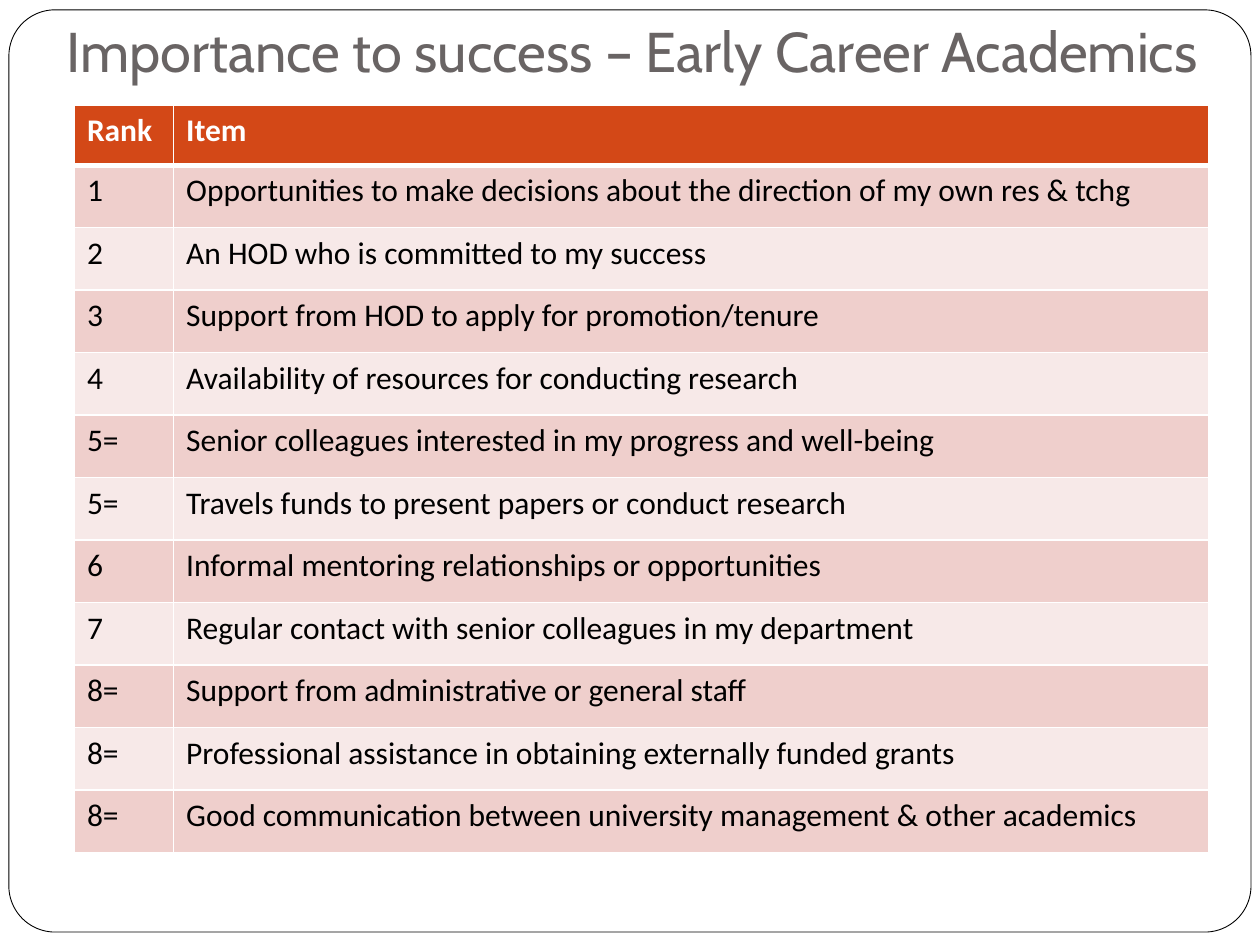
import pptx
import pptx.dml.color
import pptx.enum.shapes
import pptx.enum.text
import pptx.oxml
import pptx.oxml.ns
import pptx.util
from pptx.util import Cm

RANKING = [
    ("Rank", "Item"),
    ("1", "Opportunities to make decisions about the direction of my own res & tchg"),
    ("2", "An HOD who is committed to my success"),
    ("3", "Support from HOD to apply for promotion/tenure"),
    ("4", "Availability of resources for conducting research"),
    ("5=", "Senior colleagues interested in my progress and well-being"),
    ("5=", "Travels funds to present papers or conduct research"),
    ("6", "Informal mentoring relationships or opportunities"),
    ("7", "Regular contact with senior colleagues in my department"),
    ("8=", "Support from administrative or general staff"),
    ("8=", "Professional assistance in obtaining externally funded grants"),
    ("8=", "Good communication between university management & other academics"),
]


def colour(hex_code):
    return pptx.dml.color.RGBColor.from_string(hex_code)


def apply_format(target, values):
    for name, value in values.items():
        setattr(target, name, value)


class RankingSlide:
    WHITE, BLACK, GREY = "FFFFFF", "000000", "696464"
    HEADER, BANDS = "D34817", ("EFCFCC", "F7E9E8")
    TITLE_FONT = {"name": "Cabin", "size": pptx.util.Pt(32)}
    CELL_FONT = {"name": "Calibri", "size": pptx.util.Pt(18)}
    TITLE_FRAME = {
        "word_wrap": True,
        "vertical_anchor": pptx.enum.text.MSO_ANCHOR.BOTTOM,
        "margin_left": Cm(0.25),
        "margin_right": Cm(0.25),
        "margin_top": Cm(0.13),
        "margin_bottom": Cm(0.25),
    }

    def __init__(self, deck):
        self.slide = deck.slides.add_slide(deck.slide_layouts[6])

    def add_words(self, frame, text, font, hex_code):
        run = frame.paragraphs[0].add_run()
        run.text = text
        apply_format(run.font, font)
        run.font.color.rgb = colour(hex_code)

    def border(self, left, top, width, height):
        outline = self.slide.shapes.add_shape(
            pptx.enum.shapes.MSO_SHAPE.ROUNDED_RECTANGLE, left, top, width, height)
        outline.adjustments[0] = 0.05
        outline.shadow.inherit = False
        outline.fill.solid()
        outline.fill.fore_color.rgb = colour(self.WHITE)
        outline.line.color.rgb = colour(self.BLACK)
        outline.line.width = pptx.util.Pt(0.5)

    def title(self, text, left, top, width, height):
        frame = self.slide.shapes.add_textbox(left, top, width, height).text_frame
        apply_format(frame, self.TITLE_FRAME)
        self.add_words(frame, text, self.TITLE_FONT, self.GREY)

    def cell_edges(self, cell, widths):
        """Draw white edges; widths maps L, R, T and B to points."""
        properties = cell._tc.get_or_add_tcPr()
        for side, points in widths.items():
            properties.append(pptx.oxml.parse_xml(
                f'<a:ln{side} {pptx.oxml.ns.nsdecls("a")} w="{pptx.util.Pt(points)}">'
                f'<a:solidFill><a:srgbClr val="{self.WHITE}"/></a:solidFill></a:ln{side}>'))

    def table(self, rows, left, top, column_widths, header_height, row_height):
        heights = [header_height] + [row_height] * (len(rows) - 1)
        grid = self.slide.shapes.add_table(
            len(rows), len(column_widths), left, top,
            sum(column_widths), sum(heights)).table
        for column, width in zip(grid.columns, column_widths):
            column.width = width
        for r, (texts, height) in enumerate(zip(rows, heights)):
            grid.rows[r].height = height
            is_header = r == 0
            fill = self.HEADER if is_header else self.BANDS[(r - 1) % 2]
            ink = self.WHITE if is_header else self.BLACK
            edges = {"L": 1, "R": 1, "T": 3 if r == 1 else 1, "B": 3 if is_header else 1}
            for c, text in enumerate(texts):
                cell = grid.cell(r, c)
                self.cell_edges(cell, edges)
                cell.fill.solid()
                cell.fill.fore_color.rgb = colour(fill)
                self.add_words(cell.text_frame, text,
                               {**self.CELL_FONT, "bold": is_header}, ink)


def main():
    deck = pptx.Presentation()
    apply_format(deck, {"slide_width": Cm(25.4), "slide_height": Cm(19.05)})
    page = RankingSlide(deck)
    page.border(Cm(0.18), Cm(0.2), Cm(25.04), Cm(18.59))
    page.title("Importance to success – Early Career Academics",
               Cm(1.09), Cm(0.13), Cm(24.31), Cm(1.8))
    page.table(RANKING, Cm(1.5), Cm(2.13), [Cm(2), Cm(20.86)], Cm(1.2), Cm(1.26))
    deck.save("out.pptx")


if __name__ == "__main__":
    main()
